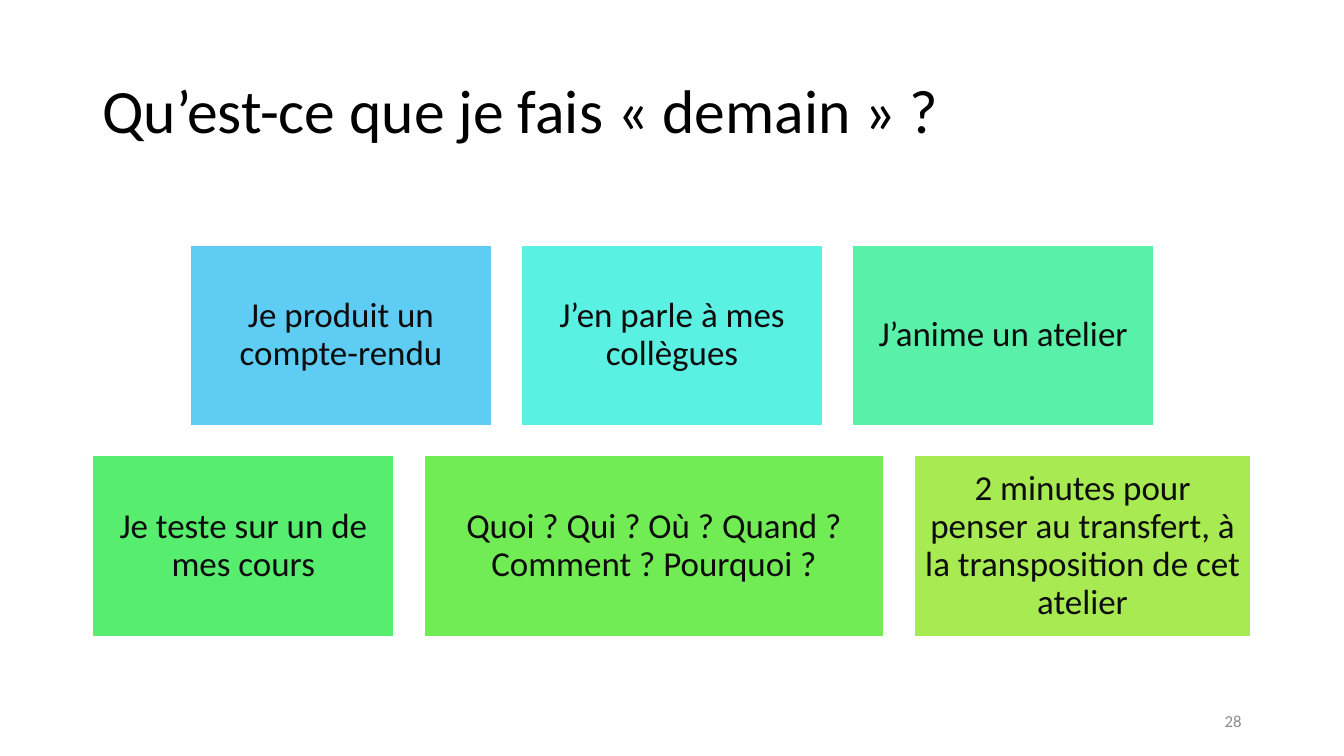
from pptx import Presentation
from pptx.dml.color import RGBColor
from pptx.enum.shapes import MSO_SHAPE
from pptx.enum.text import MSO_ANCHOR, MSO_AUTO_SIZE, PP_ALIGN
from pptx.util import Pt

RECTANGLE = MSO_SHAPE.RECTANGLE
MIDDLE = MSO_ANCHOR.MIDDLE
NO_AUTOFIT = MSO_AUTO_SIZE.NONE
LEFT, CENTER, RIGHT = PP_ALIGN.LEFT, PP_ALIGN.CENTER, PP_ALIGN.RIGHT

SLIDE_WIDTH, SLIDE_HEIGHT = 960, 540
CARD_HEIGHT, CARD_GAP = 129, 21.5
FIRST_ROW_TOP = 175

CARD_ROWS = [
    [
        ("Je produit un compte-rendu", 215, "5ECCF3"),
        ("J’en parle à mes collègues", 215, "5BF1E2"),
        ("J’anime un atelier", 215, "59F0A9"),
    ],
    [
        ("Je teste sur un de mes cours", 215, "57EE70"),
        ("Quoi ? Qui ? Où ? Quand ? Comment ? Pourquoi ?", 328.5, "72EC54"),
        ("2 minutes pour penser au transfert, à la transposition de cet atelier", 241, "A7EA52"),
    ],
]


def color(value):
    return RGBColor.from_string(value)


class SlideBuilder:
    font_name = "Calibri"

    def __init__(self, slide):
        self.slide = slide

    def set_text(self, shape, text, size, text_color, alignment, line_spacing=1.0, insets=(7.2, 3.6)):
        frame = shape.text_frame
        frame.word_wrap = True
        frame.auto_size = NO_AUTOFIT
        frame.vertical_anchor = MIDDLE
        frame.margin_left = frame.margin_right = Pt(insets[0])
        frame.margin_top = frame.margin_bottom = Pt(insets[1])
        paragraph = frame.paragraphs[0]
        paragraph.alignment = alignment
        paragraph.line_spacing = line_spacing
        run = paragraph.add_run()
        run.text = text
        run.font.name = self.font_name
        run.font.size = Pt(size)
        run.font.color.rgb = color(text_color)

    def title(self, text, left, top, width, height):
        shape = self.slide.shapes.title
        shape.left, shape.top = Pt(left), Pt(top)
        shape.width, shape.height = Pt(width), Pt(height)
        self.set_text(shape, text, 44, "000000", LEFT, 0.9)

    def card(self, text, fill, left, top, width, height):
        shape = self.slide.shapes.add_shape(RECTANGLE, Pt(left), Pt(top), Pt(width), Pt(height))
        shape.shadow.inherit = False
        shape.fill.solid()
        shape.fill.fore_color.rgb = color(fill)
        shape.line.color.rgb = color("FFFFFF")
        shape.line.width = Pt(1)
        self.set_text(shape, text, 25, "0D0D0D", CENTER, 0.9, (7.2, 7.2))

    def card_row(self, cards, top):
        row_width = sum(width for _, width, _ in cards) + CARD_GAP * (len(cards) - 1)
        left = (SLIDE_WIDTH - row_width) / 2
        for text, width, fill in cards:
            self.card(text, fill, left, top, width, CARD_HEIGHT)
            left += width + CARD_GAP

    def page_number(self, text, left, top, width, height):
        shape = self.slide.shapes.add_textbox(Pt(left), Pt(top), Pt(width), Pt(height))
        self.set_text(shape, text, 12, "8C8C8C", RIGHT)


def main():
    presentation = Presentation()
    presentation.slide_width = Pt(SLIDE_WIDTH)
    presentation.slide_height = Pt(SLIDE_HEIGHT)
    slide = presentation.slides.add_slide(presentation.slide_layouts[5])
    builder = SlideBuilder(slide)
    builder.title("Qu’est-ce que je fais « demain » ?", 66, 28.75, 828, 104.4)
    for index, cards in enumerate(CARD_ROWS):
        builder.card_row(cards, FIRST_ROW_TOP + index * (CARD_HEIGHT + CARD_GAP))
    builder.page_number("28", 678, 500.5, 216, 28.75)
    presentation.save("out.pptx")


if __name__ == "__main__":
    main()
